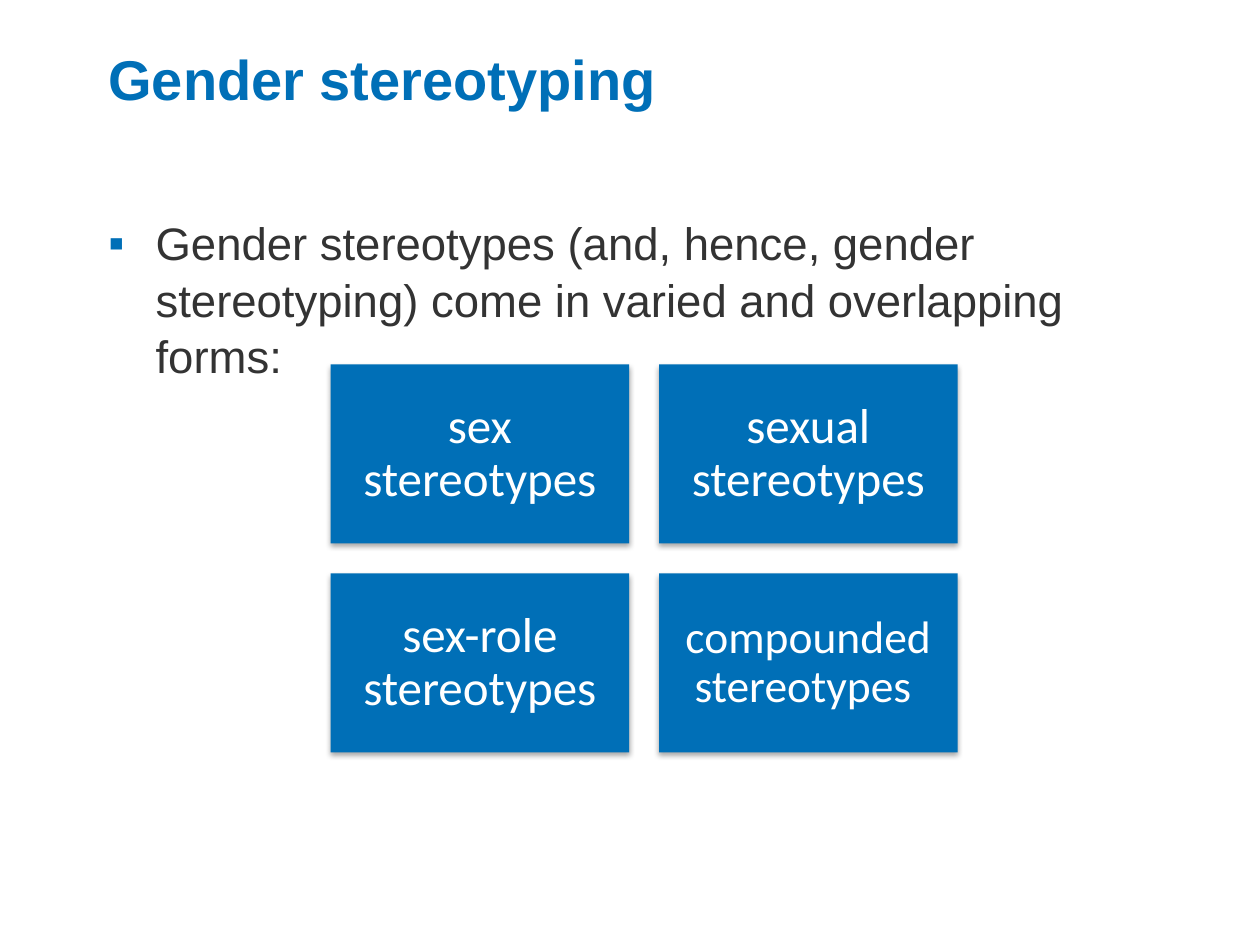
from dataclasses import dataclass
from itertools import product

from lxml.etree import SubElement as Sub
from pptx import Presentation
from pptx.dml.color import RGBColor as RGB
from pptx.enum.shapes import MSO_SHAPE as Shape
from pptx.enum.text import MSO_ANCHOR as Anchor, PP_ALIGN as Align
from pptx.oxml.ns import qn
from pptx.util import Pt


@dataclass(frozen=True)
class Theme:
    blue: str = "006FB7"
    ink: str = "333333"
    white: str = "FFFFFF"
    black: str = "000000"
    sans: str = "Arial"
    label: str = "Calibri"
    title: int = 32
    body: int = 26
    tile: int = 28
    small: int = 26


LOOK = Theme()
LEFT, TOP = 188.9, 208.2
WIDE, HIGH, GAP = 170.6, 102.3, 17.1
TILES = [
    ("sex stereotypes", LOOK.tile),
    ("sexual stereotypes", LOOK.tile),
    ("sex-role stereotypes", LOOK.tile),
    ("compounded stereotypes ", LOOK.small),
]


def apply(item, values):
    for name, value in values.items():
        setattr(item, name, value)


def write(shape, text, inset, anchor, font, color):
    """Fill a shape with one paragraph and return that paragraph."""
    frame = shape.text_frame
    sides = ("left", "top", "right", "bottom")
    apply(frame, {f"margin_{side}": Pt(inset) for side in sides})
    apply(frame, {"word_wrap": True, "vertical_anchor": anchor})
    para = frame.paragraphs[0]
    run = para.add_run()
    run.text = text
    apply(run.font, font)
    run.font.color.rgb = RGB.from_string(color)
    return para


def add_text(slide, box, text, font, color):
    shape = slide.shapes.add_textbox(*map(Pt, box))
    return write(shape, text, 3.6, Anchor.TOP, font, color)


def add_bullet(para, char, color, indent):
    props = para._p.get_or_add_pPr()
    props.set("marL", str(Pt(indent)))
    props.set("indent", str(-Pt(indent)))
    Sub(Sub(props, qn("a:buClr")), qn("a:srgbClr"), val=color)
    Sub(props, qn("a:buFont"), typeface=LOOK.sans)
    Sub(props, qn("a:buChar"), char=char)


def add_shadow(shape):
    shape.shadow.inherit = False
    effects = shape._element.spPr.find(qn("a:effectLst"))
    shadow = Sub(effects, qn("a:outerShdw"), blurRad=str(Pt(3)),
                 dist=str(Pt(1.8)), dir="5400000", rotWithShape="0")
    color = Sub(shadow, qn("a:srgbClr"), val=LOOK.black)
    Sub(color, qn("a:alpha"), val="35000")


def add_tile(slide, left, top, text, size):
    box = map(Pt, (left, top, WIDE, HIGH))
    tile = slide.shapes.add_shape(Shape.RECTANGLE, *box)
    tile.fill.solid()
    tile.fill.fore_color.rgb = RGB.from_string(LOOK.blue)
    tile.line.fill.background()
    add_shadow(tile)
    font = {"name": LOOK.label, "size": Pt(size)}
    para = write(tile, text, 8.6, Anchor.MIDDLE, font, LOOK.white)
    apply(para, {"alignment": Align.CENTER, "line_spacing": 0.9})


def main():
    deck = Presentation()
    apply(deck, {"slide_width": Pt(720), "slide_height": Pt(540)})
    slide = deck.slides.add_slide(deck.slide_layouts[6])

    add_text(slide, (58.3, 21.6, 595.4, 85.7), "Gender stereotyping",
             {"name": LOOK.sans, "size": Pt(LOOK.title), "bold": True},
             LOOK.blue)
    point = add_text(
        slide, (58.3, 118.1, 596.2, 352.8),
        "Gender stereotypes (and, hence, gender stereotyping) "
        "come in varied and overlapping forms:",
        {"name": LOOK.sans, "size": Pt(LOOK.body)}, LOOK.ink)
    add_bullet(point, "▪", LOOK.blue, 27)
    point.line_spacing = 1.04

    for (row, col), (text, size) in zip(product(range(2), repeat=2), TILES):
        add_tile(slide, LEFT + col * (WIDE + GAP), TOP + row * (HIGH + GAP),
                 text, size)

    deck.save("out.pptx")


if __name__ == "__main__":
    main()
